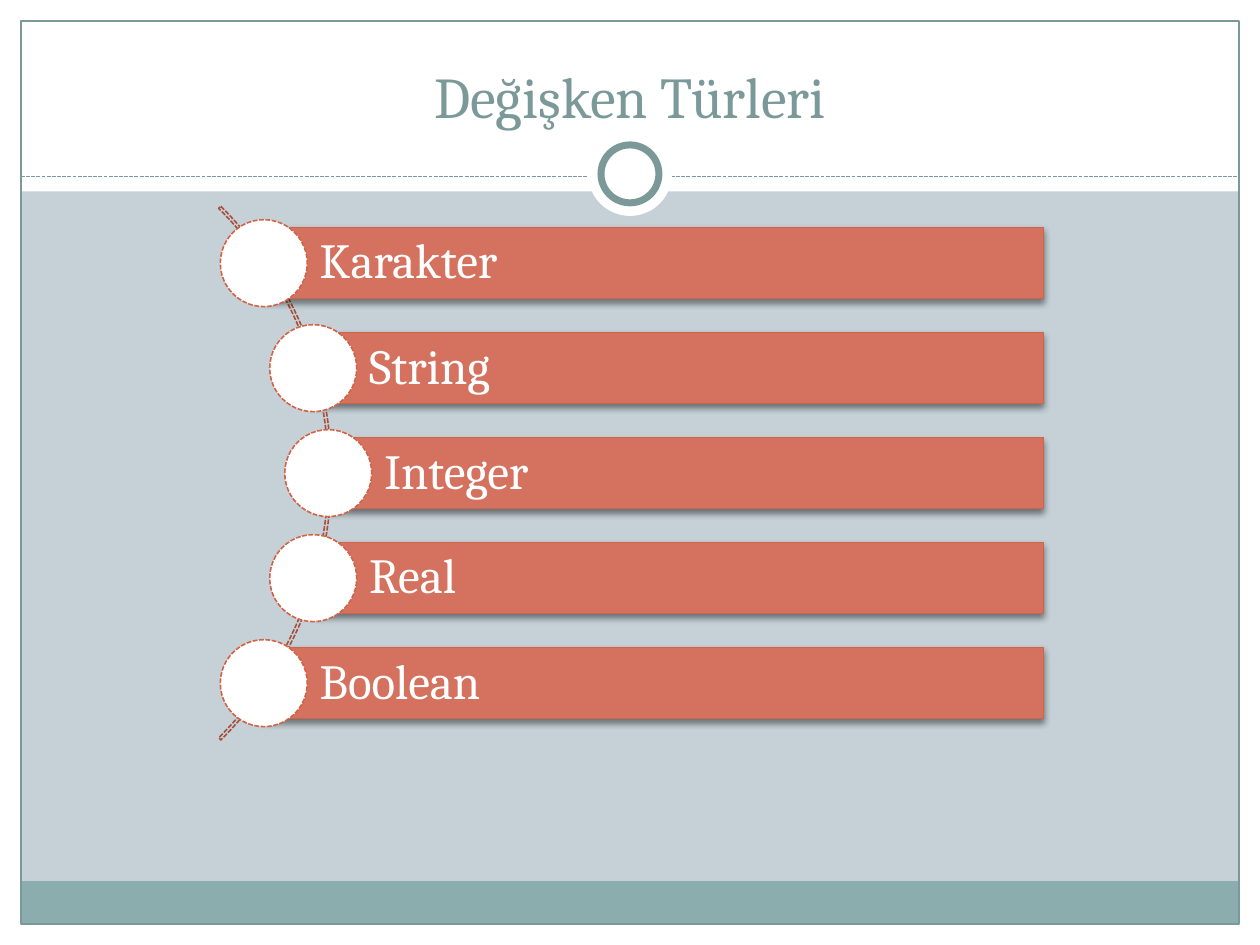
import math

import pptx
import pptx.dml.color
import pptx.enum.dml
import pptx.enum.shapes
import pptx.enum.text
import pptx.oxml
import pptx.oxml.ns
import pptx.util

Pt = pptx.util.Pt
SHAPE = pptx.enum.shapes.MSO_SHAPE
DASH = pptx.enum.dml.MSO_LINE.SQUARE_DOT  # written as sysDash
ANCHOR = pptx.enum.text.MSO_ANCHOR
ALIGN = pptx.enum.text.PP_ALIGN

COLORS = {
    "background": "C5D1D7",
    "white": "FFFFFF",
    "footer": "8CADAE",
    "frame": "7C999A",
    "bar": "D4725F",
    "bar_line": "D16349",
    "arc_line": "A74F3A",
    "shadow": "000000",
}
FONT = "Cambria"
WIDTH, HEIGHT, MARGIN = 720, 540, 12
TYPES = ["Karakter", "String", "Integer", "Real", "Boolean"]


def rgb(name):
    return pptx.dml.color.RGBColor.from_string(COLORS[name])


def style_line(line, color, weight, dash=None):
    line.color.rgb = rgb(color)
    line.width = Pt(weight)
    if dash is not None:
        line.dash_style = dash


def add_part(slide, kind, box, fill=None, line=None, weight=0.75, dash=None):
    part = slide.shapes.add_shape(kind, *(Pt(round(v, 2)) for v in box))
    part.shadow.inherit = False
    if fill:
        part.fill.solid()
        part.fill.fore_color.rgb = rgb(fill)
    else:
        part.fill.background()
    if line:
        style_line(part.line, line, weight, dash)
    else:
        part.line.fill.background()
    return part


def add_circle(slide, x, y, diameter, **style):
    box = (x - diameter / 2, y - diameter / 2, diameter, diameter)
    return add_part(slide, SHAPE.OVAL, box, "white", **style)


def effect_list(part):
    """Give the part its own effect list, empty at first."""
    properties = part._element.spPr
    effects = properties.find(pptx.oxml.ns.qn("a:effectLst"))
    if effects is None:
        effects = pptx.oxml.parse_xml(
            f"<a:effectLst {pptx.oxml.ns.nsdecls('a')}/>")
        properties.append(effects)
    return effects


def cast_shadow(part):
    effect_list(part).append(pptx.oxml.parse_xml(
        f'<a:outerShdw {pptx.oxml.ns.nsdecls("a")} blurRad="{Pt(4)}" '
        f'dist="{Pt(2)}" dir="5400000" algn="ctr" rotWithShape="0">'
        f'<a:srgbClr val="{COLORS["shadow"]}"><a:alpha val="45000"/>'
        "</a:srgbClr></a:outerShdw>"))


def write(frame, text, size, color, align, anchor):
    frame.word_wrap = True
    frame.vertical_anchor = anchor
    paragraph = frame.paragraphs[0]
    paragraph.text = text
    paragraph.alignment = align
    paragraph.font.name = FONT
    paragraph.font.size = Pt(size)
    paragraph.font.color.rgb = rgb(color)
    return paragraph


def add_frame(slide, left, top, width, height):
    right, bottom = left + width, top + height
    header, footer, rule_y = 109.44, 24.48, 100.8

    # White margins and header, then the footer band
    for box in [
        (left, bottom - MARGIN, width, MARGIN),
        (left, top, width, header),
        (left, top, MARGIN, height),
        (right - MARGIN, top, MARGIN, height),
    ]:
        add_part(slide, SHAPE.RECTANGLE, box, "white")
    inner = width - 2 * MARGIN
    add_part(slide, SHAPE.RECTANGLE,
             (left + MARGIN, bottom - MARGIN - footer, inner, footer), "footer")
    add_part(slide, SHAPE.RECTANGLE,
             (left + MARGIN, top + MARGIN, inner, height - 2 * MARGIN),
             line="frame")

    # Dashed rule broken by the ring
    rule = slide.shapes.add_connector(
        pptx.enum.shapes.MSO_CONNECTOR.STRAIGHT,
        Pt(left + MARGIN), Pt(top + rule_y), Pt(right - MARGIN), Pt(top + rule_y))
    style_line(rule.line, "frame", 0.75, DASH)
    effect_list(rule)
    ring_x, ring_y = left + width / 2, top + 99.4
    add_circle(slide, ring_x, ring_y, 48)
    add_circle(slide, ring_x, ring_y, 33.12, line="frame", weight=4)


def add_title(slide, left, top, width, height, text):
    title = slide.shapes.add_textbox(Pt(left), Pt(top), Pt(width), Pt(height))
    write(title.text_frame, text, 33, "frame", ALIGN.CENTER, ANCHOR.BOTTOM)


def add_type_list(slide, left, top, width, height, names):
    pitch, bar_height, knob = height / len(names), 40.32, 49.68
    middle, right = top + height / 2, left + width

    # Arc on which the circles sit
    arc_size, knob_radius = 431.28, 213.84
    arc_x = left - 151.56
    arc = add_part(slide, SHAPE.BLOCK_ARC,
                   (arc_x - arc_size / 2, middle - arc_size / 2, arc_size, arc_size),
                   line="arc_line", weight=0.9, dash=DASH)
    for index, value in enumerate((189, 27, 0.004)):
        arc.adjustments[index] = value

    # One bar and circle for each type
    for index, name in enumerate(names):
        offset = (index - (len(names) - 1) / 2) * pitch
        x, y = arc_x + math.sqrt(knob_radius ** 2 - offset ** 2), middle + offset
        bar = add_part(slide, SHAPE.RECTANGLE,
                       (x, y - bar_height / 2, right - x, bar_height),
                       "bar", "bar_line")
        cast_shadow(bar)
        frame = bar.text_frame
        frame.margin_left = Pt(32)
        frame.margin_right = frame.margin_top = frame.margin_bottom = Pt(5.6)
        label = write(frame, name, 28, "white", ALIGN.LEFT, ANCHOR.MIDDLE)
        label.line_spacing = 0.9
        add_circle(slide, x, y, knob, line="bar_line", weight=0.9, dash=DASH)


def main():
    deck = pptx.Presentation()
    deck.slide_width, deck.slide_height = Pt(WIDTH), Pt(HEIGHT)
    slide = deck.slides.add_slide(deck.slide_layouts[6])
    slide.background.fill.solid()
    slide.background.fill.fore_color.rgb = rgb("background")
    add_frame(slide, 0, 0, WIDTH, HEIGHT)
    add_title(slide, 24, 18, 672, 60, "Değişken Türleri")
    add_type_list(slide, 125.28, 120.36, 470.88, 300, TYPES)
    deck.save("out.pptx")


if __name__ == "__main__":
    main()
